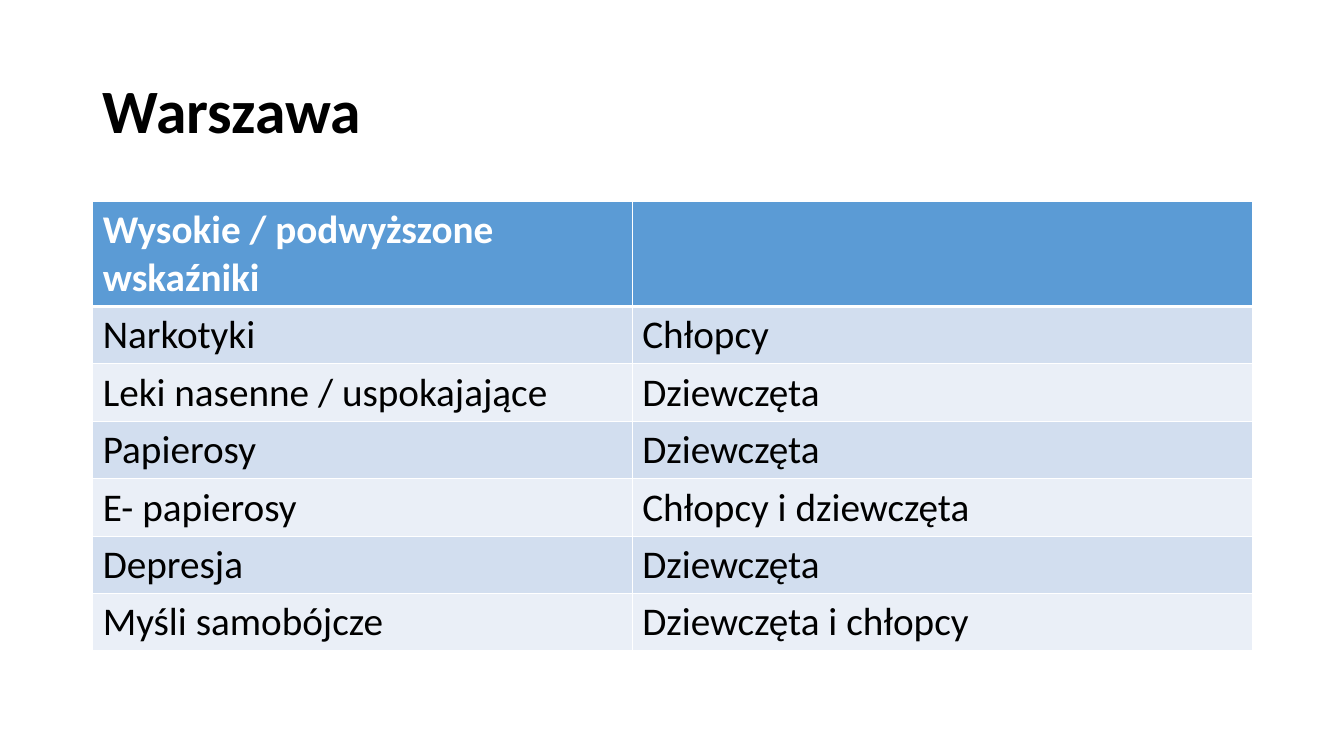
from dataclasses import dataclass

import lxml.etree
import pptx
import pptx.dml.color
import pptx.enum.text
import pptx.oxml.ns
import pptx.util

Inches = pptx.util.Inches
Pt = pptx.util.Pt


@dataclass(frozen=True)
class Theme:
    font: str = "Calibri"
    ink: str = "000000"
    paper: str = "FFFFFF"
    header: str = "5B9BD5"
    bands: tuple = ("D2DEEF", "EAEFF7")
    title_size: int = 44
    table_size: int = 28
    rule: int = 1
    header_rule: int = 3


INDICATORS = [
    ("Wysokie / podwyższone wskaźniki", ""),
    ("Narkotyki", "Chłopcy"),
    ("Leki nasenne / uspokajające", "Dziewczęta"),
    ("Papierosy", "Dziewczęta"),
    ("E- papierosy", "Chłopcy i dziewczęta"),
    ("Depresja", "Dziewczęta"),
    ("Myśli samobójcze", "Dziewczęta i chłopcy"),
]


def rgb(color):
    return pptx.dml.color.RGBColor.from_string(color)


class SlideBuilder:
    def __init__(self, slide, theme):
        self.slide = slide
        self.theme = theme

    def style(self, paragraph, size, color, bold):
        font = paragraph.font
        font.name = self.theme.font
        font.size = Pt(size)
        font.bold = bold
        font.color.rgb = rgb(color)

    def title(self, text, left, top, width, height):
        heading = self.slide.shapes.add_textbox(
            Inches(left), Inches(top), Inches(width), Inches(height))
        frame = heading.text_frame
        frame.word_wrap = True
        frame.vertical_anchor = pptx.enum.text.MSO_ANCHOR.MIDDLE
        paragraph = frame.paragraphs[0]
        paragraph.text = text
        paragraph.line_spacing = 0.9
        self.style(paragraph, self.theme.title_size, self.theme.ink, True)

    def border(self, cell, side, width):
        """Draw one cell edge; side is L, R, T or B. Call before filling the cell."""
        qn = pptx.oxml.ns.qn
        properties = cell._tc.get_or_add_tcPr()
        line = lxml.etree.SubElement(properties, qn(f"a:ln{side}"), w=str(Pt(width)))
        fill = lxml.etree.SubElement(line, qn("a:solidFill"))
        lxml.etree.SubElement(fill, qn("a:srgbClr"), val=self.theme.paper)

    def cell(self, cell, text, row):
        theme = self.theme
        is_header = row == 0
        top = theme.header_rule if row == 1 else theme.rule
        bottom = theme.header_rule if is_header else theme.rule
        for side, width in zip("LRTB", (theme.rule, theme.rule, top, bottom)):
            self.border(cell, side, width)
        cell.fill.solid()
        cell.fill.fore_color.rgb = rgb(
            theme.header if is_header else theme.bands[(row - 1) % 2])
        paragraph = cell.text_frame.paragraphs[0]
        paragraph.text = text
        self.style(paragraph, theme.table_size,
                   theme.paper if is_header else theme.ink, is_header)

    def table(self, rows, left, top, column_widths, row_heights):
        table = self.slide.shapes.add_table(
            len(rows), len(column_widths), Inches(left), Inches(top),
            Inches(sum(column_widths)), Inches(sum(row_heights))).table
        for column, width in zip(table.columns, column_widths):
            column.width = Inches(width)
        for row, (texts, height) in enumerate(zip(rows, row_heights)):
            table.rows[row].height = Inches(height)
            for column, text in enumerate(texts):
                self.cell(table.cell(row, column), text, row)


def main():
    presentation = pptx.Presentation()
    presentation.slide_width = Inches(13.33)
    presentation.slide_height = Inches(7.5)
    slide = presentation.slides.add_slide(presentation.slide_layouts[6])

    builder = SlideBuilder(slide, Theme())
    builder.title("Warszawa", 0.92, 0.4, 11.5, 1.45)
    data_rows = len(INDICATORS) - 1
    builder.table(INDICATORS, 0.92, 2, (5.35, 6.15), [1.04] + [0.57] * data_rows)
    presentation.save("out.pptx")


if __name__ == "__main__":
    main()
